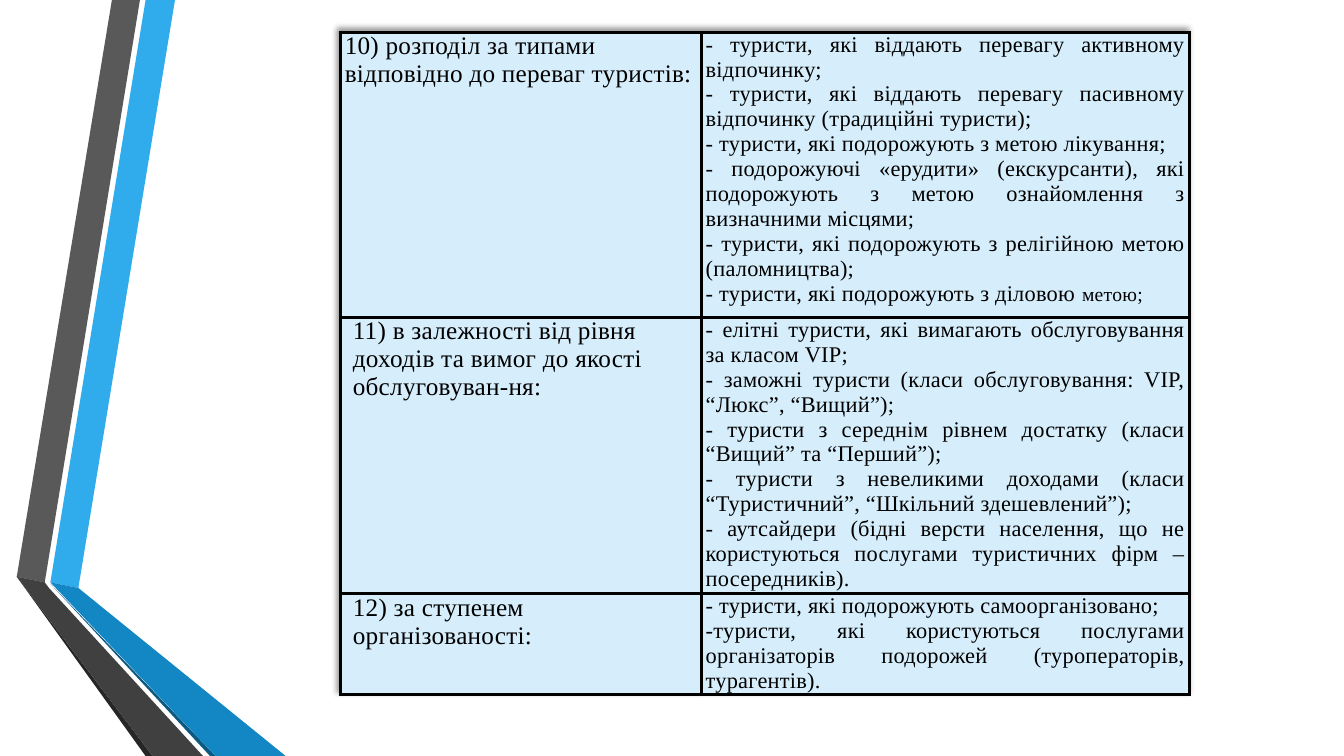
from lxml import etree
from pptx import Presentation
from pptx.dml.color import RGBColor
from pptx.enum import text
from pptx.oxml import ns
from pptx.util import Pt

# Left ribbon: fill and corner points
RIBBON = [
    ("30ACEC", [(36, 416.3), (55.5, 419.5), (124.6, 0), (104.4, 0)]),
    ("595959", [(100, 0), (80, 0), (11.5, 412.5), (31.5, 415.5)]),
    ("262626", [(11.5, 412.5), (104.4, 540), (108.7, 540)]),
    ("0C5A82", [(36, 417), (149.8, 540), (154, 540)]),
    ("1287C3", [(36, 416.3), (154, 540), (203.8, 540), (55.5, 419.5)]),
    ("404040", [(145.4, 540), (34.6, 420), (31.5, 415.5), (11.5, 412.5),
                (108.7, 540)]),
]

# Each row: height, heading, heading indent, list of tourist types
ROWS = [
    (203.8, "10) розподіл за типами відповідно до переваг туристів:", 0, [
        "- туристи, які віддають перевагу активному відпочинку;",
        "- туристи, які віддають перевагу пасивному відпочинку "
        "(традиційні туристи);",
        "- туристи, які подорожують з метою лікування;",
        "- подорожуючі «ерудити» (екскурсанти), які подорожують з метою "
        "ознайомлення з визначними місцями;",
        "- туристи, які подорожують з релігійною метою (паломництва);",
        "- туристи, які подорожують з діловою ",
    ]),
    (197.3, "11) в залежності від рівня доходів та вимог до якості "
            "обслуговуван-ня:", 5.76, [
        "- елітні туристи, які вимагають обслуговування за класом VIP;",
        "- заможні туристи (класи обслуговування: VIP, “Люкс”, “Вищий”);",
        "- туристи з середнім рівнем достатку (класи “Вищий” та “Перший”);",
        "- туристи з невеликими доходами (класи “Туристичний”, "
        "“Шкільний здешевлений”);",
        "- аутсайдери (бідні версти населення, що не користуються послугами "
        "туристичних фірм – посередників).",
    ]),
    (72, "12) за ступенем організованості:", 5.76, [
        "- туристи, які подорожують самоорганізовано;",
        "-туристи, які користуються послугами організаторів подорожей "
        "(туроператорів, турагентів).",
    ]),
]
TAIL = "метою;"
LEFT, TOP = 243.4, 23
COLS = [257.8, 348.5]
HEAD, BODY, SMALL = 18, 16, 14
FONT, INK, PALE = "Times New Roman", "000000", "D6EEFB"
INSET = {"margin_left": Pt(2.88), "margin_right": Pt(2.88),
         "margin_top": 0, "margin_bottom": 0}
PLAIN = {"first_row": False, "horz_banding": False}


def put(obj, vals):
    for key, val in vals.items():
        setattr(obj, key, val)


def paint(fill, color):
    fill.solid()
    fill.fore_color.rgb = RGBColor.from_string(color)


def node(home, tag, **attrs):
    return etree.SubElement(home, ns.qn("a:" + tag), attrs)


def write(para, words, size):
    run = para.add_run()
    run.text = words
    put(run.font, {"name": FONT, "size": Pt(size)})
    paint(run.font.fill, INK)
    run.font._element.set("spc", "20")


def border(cell):
    """Draw all four edges; edge lines must precede the cell fill."""
    props = cell._tc.get_or_add_tcPr()
    for side in ("lnL", "lnR", "lnT", "lnB"):
        line = node(props, side, w=str(Pt(2.25)))
        node(node(line, "solidFill"), "srgbClr", val=INK)


def shade(table):
    """Cast a soft shadow up and to the left of the table."""
    props = table._tbl.tblPr
    glow = node(props, "effectLst")
    props.insert(0, glow)
    cast = node(glow, "outerShdw", blurRad=str(Pt(4)), dist=str(Pt(3)),
                dir="13500000", algn="br", rotWithShape="0")
    node(node(cast, "prstClr", val="black"), "alpha", val="40000")


def ribbon(slide):
    for color, pts in RIBBON:
        pen = slide.shapes.build_freeform(*pts[0], scale=Pt(1))
        pen.add_line_segments(pts[1:], close=True)
        band = pen.convert_to_shape()
        paint(band.fill, color)
        band.line.fill.background()
        band.shadow.inherit = False


def grid(slide):
    high = sum(row[0] for row in ROWS)
    table = slide.shapes.add_table(
        len(ROWS), len(COLS), Pt(LEFT), Pt(TOP), Pt(sum(COLS)),
        Pt(high)).table
    put(table, PLAIN)
    shade(table)
    for col, wide in zip(table.columns, COLS):
        col.width = Pt(wide)
    for row, (tall, head, indent, kinds) in zip(table.rows, ROWS):
        row.height = Pt(tall)
        for cell in row.cells:
            put(cell, INSET)
            border(cell)
            paint(cell.fill, PALE)
        name, types = (cell.text_frame for cell in row.cells)
        title = name.paragraphs[0]
        write(title, head, HEAD)
        if indent:
            put_indent = {"marL": str(Pt(indent)), "indent": "0"}
            title._p.get_or_add_pPr().attrib.update(put_indent)
        for i, kind in enumerate(kinds):
            para = types.add_paragraph() if i else types.paragraphs[0]
            para.alignment = text.PP_ALIGN.JUSTIFY
            write(para, kind, BODY)
    last = table.cell(0, 1).text_frame.paragraphs[-1]
    last.alignment = text.PP_ALIGN.LEFT
    write(last, TAIL, SMALL)


def main():
    deck = Presentation()
    put(deck, {"slide_width": Pt(960), "slide_height": Pt(540)})
    slide = deck.slides.add_slide(deck.slide_layouts[6])
    ribbon(slide)
    grid(slide)
    deck.save("out.pptx")


if __name__ == "__main__":
    main()
